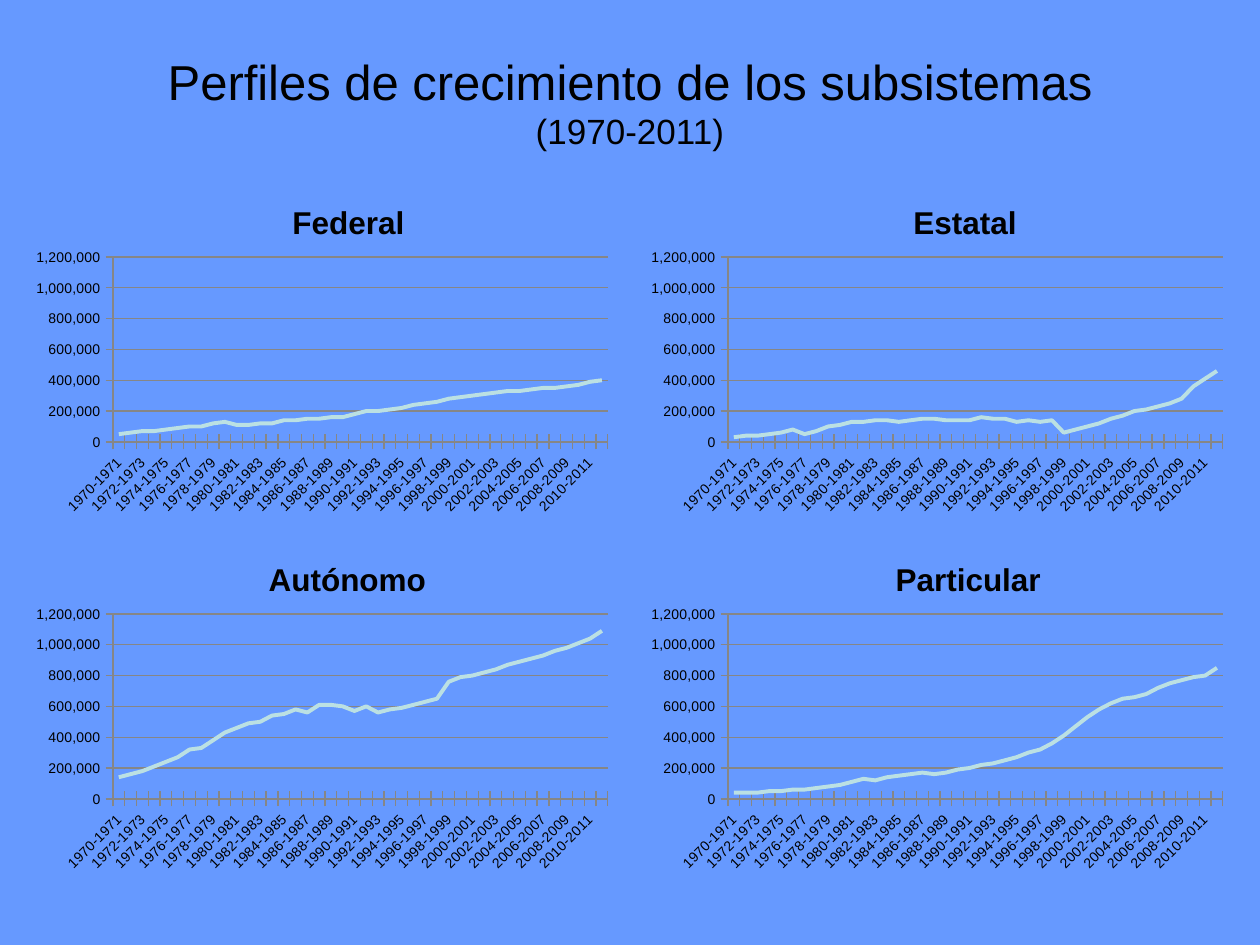
from lxml import etree
from pptx import Presentation
from pptx.chart.data import CategoryChartData
from pptx.dml.color import RGBColor
from pptx.enum.chart import XL_CHART_TYPE, XL_TICK_MARK
from pptx.enum.text import MSO_ANCHOR, PP_ALIGN
from pptx.oxml import parse_xml
from pptx.oxml.ns import nsdecls
from pptx.util import Emu, Pt

FONT = "Arial"
COLORS = {"background": "6699FF", "text": "000000", "grid": "868686", "series": "BBE0E3"}
YEARS = [f"{year}-{year + 1}" for year in range(1970, 2012)]
UNIT = 10000
SUBSYSTEMS = [
    ("Federal", 263, [
        5, 6, 7, 7, 8, 9, 10, 10, 12, 13, 11, 11, 12, 12, 14, 14, 15, 15, 16, 16, 18,
        20, 20, 21, 22, 24, 25, 26, 28, 29, 30, 31, 32, 33, 33, 34, 35, 35, 36, 37, 39, 40]),
    ("Estatal", 268, [
        3, 4, 4, 5, 6, 8, 5, 7, 10, 11, 13, 13, 14, 14, 13, 14, 15, 15, 14, 14, 14,
        16, 15, 15, 13, 14, 13, 14, 6, 8, 10, 12, 15, 17, 20, 21, 23, 25, 28, 36, 41, 46]),
    ("Autónomo", 240, [
        14, 16, 18, 21, 24, 27, 32, 33, 38, 43, 46, 49, 50, 54, 55, 58, 56, 61, 61, 60, 57,
        60, 56, 58, 59, 61, 63, 65, 76, 79, 80, 82, 84, 87, 89, 91, 93, 96, 98, 101, 104, 109]),
    ("Particular", 247, [
        4, 4, 4, 5, 5, 6, 6, 7, 8, 9, 11, 13, 12, 14, 15, 16, 17, 16, 17, 19, 20,
        22, 23, 25, 27, 30, 32, 36, 41, 47, 53, 58, 62, 65, 66, 68, 72, 75, 77, 79, 80, 85]),
]


def px(length):
    """Turn pixels into EMU."""
    return Emu(round(length * 914400 / 126))


def color(name):
    """Look up a named colour."""
    return RGBColor.from_string(COLORS[name])


def style_font(font, size, bold=False):
    """Set the common text style."""
    font.name, font.size, font.bold = FONT, Pt(size), bold
    font.color.rgb = color("text")


def manual_layout(inner=False, **fractions):
    """Build a chart layout from fractions of the chart area."""
    layout = parse_xml(f"<c:layout {nsdecls('c')}><c:manualLayout/></c:layout>")
    namespace = layout.nsmap["c"]
    entries = {"layoutTarget": "inner"} if inner else {}
    entries.update(xMode="edge", yMode="edge", **fractions)
    for name, value in entries.items():
        etree.SubElement(layout[0], f"{{{namespace}}}{name}").set("val", str(value))
    return layout


def add_heading(page, left, top, width, height):
    """Place the centred two-line heading."""
    frame = page.shapes.add_textbox(px(left), px(top), px(width), px(height)).text_frame
    frame.word_wrap = True
    frame.vertical_anchor = MSO_ANCHOR.MIDDLE
    para = frame.paragraphs[0]
    para.alignment = PP_ALIGN.CENTER
    span = para.add_run()
    span.text = "Perfiles de crecimiento de los subsistemas"
    style_font(span.font, 28)
    para.add_line_break()
    span = para.add_run()
    span.text = "(1970-2011)"
    style_font(span.font, 20)


def style_axis(axis):
    """Set the ticks, labels and line of an axis."""
    axis.major_tick_mark = XL_TICK_MARK.CROSS
    axis.minor_tick_mark = XL_TICK_MARK.NONE
    axis.format.line.color.rgb = color("grid")
    style_font(axis.tick_labels.font, 8)


def add_growth_chart(page, left, top, width, height, name, title_left, values):
    """Place one subsystem line chart in its box."""
    data = CategoryChartData(number_format="#,##0")
    data.categories = YEARS
    data.add_series(name, [value * UNIT for value in values])
    chart = page.shapes.add_chart(
        XL_CHART_TYPE.LINE, px(left), px(top), px(width), px(height), data).chart
    style_font(chart.font, 10)
    chart.has_legend = False
    chart.has_title = True
    title = chart.chart_title
    para = title.text_frame.paragraphs[0]
    para.text = name
    style_font(para.font, 18, bold=True)
    title.include_in_layout = False
    title_element = chart.element.chart.find("c:title", chart.element.nsmap)
    for old in title_element.findall("c:layout", title_element.nsmap):
        title_element.remove(old)
    title_element.insert(1, manual_layout(
        x=round(title_left / width, 2), y=round(22 / height, 2)))

    plot_area = chart.element.chart.plotArea
    for old in plot_area.findall("c:layout", plot_area.nsmap):
        plot_area.remove(old)
    plot_area.insert(0, manual_layout(
        inner=True, x=88 / width, y=82 / height, w=495 / width, h=185 / height))

    style_axis(chart.category_axis)
    labels = chart.element.find(".//c:catAx/c:txPr/a:bodyPr", {
        **chart.element.nsmap, "a": "http://schemas.openxmlformats.org/drawingml/2006/main"})
    labels.set("rot", "-2700000")
    value_axis = chart.value_axis
    style_axis(value_axis)
    value_axis.minimum_scale = 0
    value_axis.maximum_scale = 1200000
    value_axis.major_unit = 200000
    value_axis.has_major_gridlines = True
    value_axis.major_gridlines.format.line.color.rgb = color("grid")
    value_axis.tick_labels.number_format = "#,##0"
    value_axis.tick_labels.number_format_is_linked = False

    chart.plots[0].vary_by_categories = False
    series = chart.plots[0].series[0]
    series.smooth = False
    series.format.line.color.rgb = color("series")
    series.format.line.width = Pt(2.25)


def add_chart_grid(page, left, top, column_step, row_step):
    """Place the four charts in two rows and two columns."""
    for index, subsystem in enumerate(SUBSYSTEMS):
        row, column = divmod(index, 2)
        add_growth_chart(page, left + column * column_step, top + row * row_step,
                         595, 348, *subsystem)


def main():
    """Build and save the slide."""
    deck = Presentation()
    deck.slide_width, deck.slide_height = px(1260), px(945)
    page = deck.slides.add_slide(deck.slide_layouts[6])
    page.background.fill.solid()
    page.background.fill.fore_color.rgb = color("background")
    add_heading(page, 63, 38, 1134, 127)
    add_chart_grid(page, 25, 175, 615, 357)
    deck.save("out.pptx")


if __name__ == "__main__":
    main()
